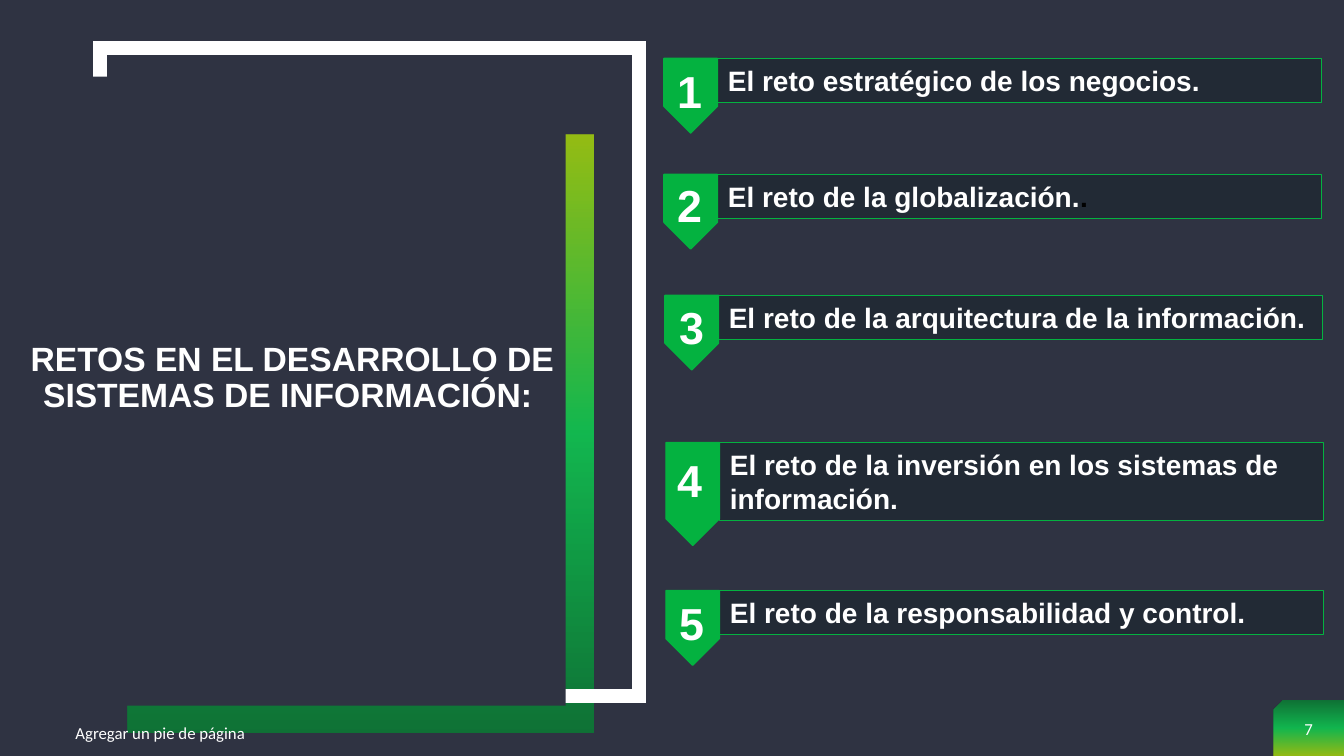
from lxml import etree
from pptx import Presentation
from pptx.dml.color import RGBColor
from pptx.enum.shapes import MSO_SHAPE
from pptx.enum.text import MSO_ANCHOR, PP_ALIGN
from pptx.oxml.ns import qn
from pptx.util import Inches, Pt

RECT = MSO_SHAPE.RECTANGLE
PENTAGON = MSO_SHAPE.PENTAGON
SNIP = MSO_SHAPE.SNIP_1_RECTANGLE
LEFT, CENTER = PP_ALIGN.LEFT, PP_ALIGN.CENTER
TOP, MIDDLE = MSO_ANCHOR.TOP, MSO_ANCHOR.MIDDLE


def color(value):
    return RGBColor.from_string(value)


class SlideBuilder:
    NAVY, DARK, GREEN, WHITE, BLACK = "2F3342", "222A35", "04B240", "FFFFFF", "000000"
    GRADIENT = [(0, "038B30"), (50, "05EE55"), (100, "C0F400")]
    OPACITY = 70

    def __init__(self, deck):
        self.page = deck.slides.add_slide(deck.slide_layouts[6])
        background = self.page.background.fill
        background.solid()
        background.fore_color.rgb = color(self.NAVY)

    def shape(self, kind, place, fill=None, line=None, width=1):
        box = self.page.shapes.add_shape(kind, *map(Inches, place))
        box.shadow.inherit = False
        if fill:
            box.fill.solid()
            box.fill.fore_color.rgb = color(fill)
        else:
            box.fill.background()
        if line:
            box.line.color.rgb = color(line)
            box.line.width = Pt(width)
        else:
            box.line.fill.background()
        return box

    def gradient_shape(self, kind, place, angle):
        box = self.shape(kind, place)
        box.fill.gradient()
        box.fill.gradient_angle = angle
        stops = box._element.spPr.find(qn("a:gradFill")).find(qn("a:gsLst"))
        for stop in list(stops):
            stops.remove(stop)
        for position, value in self.GRADIENT:
            stop = etree.SubElement(stops, qn("a:gs"), pos=str(position * 1000))
            tone = etree.SubElement(stop, qn("a:srgbClr"), val=value)
            etree.SubElement(tone, qn("a:alpha"), val=str(self.OPACITY * 1000))
        return box

    def frame(self, place, width):
        box = self.shape(RECT, place, line=self.WHITE, width=width)
        outline = box._element.spPr.find(qn("a:ln"))
        etree.SubElement(outline, qn("a:miter"), lim="800000")

    def add_runs(self, box, runs, size, font="Arial", bold=True, align=LEFT, anchor=TOP):
        frame = box.text_frame
        frame.word_wrap = True
        frame.vertical_anchor = anchor
        para = frame.paragraphs[0]
        para.alignment = align
        for text, tone in runs:
            span = para.add_run()
            span.text = text
            span.font.name = font
            span.font.size = Pt(size)
            span.font.bold = bold
            span.font.color.rgb = color(tone)
        return para

    def text(self, place, text, size, **style):
        box = self.page.shapes.add_textbox(*map(Inches, place))
        return box, self.add_runs(box, [(text, self.WHITE)], size, **style)

    def challenge(self, left, top, height, marker_length, runs):
        bar = self.shape(RECT, (left, top, 5.99, height), self.DARK, self.GREEN, 0.75)
        self.add_runs(bar, runs, 20)
        # The marker points down, its right edge on the bar's left edge
        thick = 0.53
        place = (left - 0.27 - marker_length / 2, top + (marker_length - thick) / 2,
                 marker_length, thick)
        marker = self.shape(PENTAGON, place, self.GREEN, self.GREEN)
        marker.rotation = 90


def main():
    deck = Presentation()
    deck.slide_width, deck.slide_height = Inches(13.33), Inches(7.5)
    slide = SlideBuilder(deck)
    white = slide.WHITE

    # Backdrop: page badge, gradient panel, white frame, cover
    badge = slide.gradient_shape(SNIP, (12.63, 6.95, 0.7, 0.55), 270)
    badge._element.spPr.find(qn("a:xfrm")).set("flipH", "1")
    slide.gradient_shape(RECT, (1.27, 1.34, 4.62, 5.93), 90)
    slide.frame((0.99, 0.48, 5.35, 6.43), 10)
    slide.shape(RECT, (0.72, 0.76, 4.89, 6.24), slide.NAVY)

    # Title, footer and page number
    title, para = slide.text((0.22, 3.44, 5.36, 0.63),
                             "RETOS EN EL DESARROLLO DE SISTEMAS DE INFORMACIÓN: ",
                             24, align=CENTER, anchor=MIDDLE)
    title.text_frame.margin_left = title.text_frame.margin_right = 0
    para.line_spacing = 0.9
    slide.text((0.65, 7.07, 4.5, 0.4), "Agregar un pie de página", 12,
               font="Calibri", bold=False, anchor=MIDDLE)
    slide.text((12.63, 7.01, 0.7, 0.45), "7", 12,
               font="Calibri", bold=False, align=CENTER, anchor=MIDDLE)

    # Challenges: bar left, top, height, marker length, number left, top, runs
    challenges = [
        (7.12, 0.58, 0.44, 0.74, 6.62, 0.58,
         [("El reto estratégico de los negocios.", white)]),
        (7.12, 1.73, 0.44, 0.74, 6.62, 1.71,
         [("El reto de la globalización.", white), (".", slide.BLACK)]),
        (7.13, 2.93, 0.44, 0.74, 6.64, 2.92,
         [("El reto de la arquitectura de la información.", white)]),
        (7.14, 4.39, 0.77, 1.02, 6.62, 4.44,
         [("El reto de la inversión en los sistemas de información.", white)]),
        (7.14, 5.86, 0.44, 0.74, 6.64, 5.86,
         [("El reto de la responsabilidad y control.", white)]),
    ]
    for number, (left, top, height, length, number_left, number_top, runs) in enumerate(challenges, 1):
        slide.challenge(left, top, height, length, runs)
        slide.text((number_left, number_top, 0.52, 0.64), str(number), 32)

    deck.save("out.pptx")


if __name__ == "__main__":
    main()
